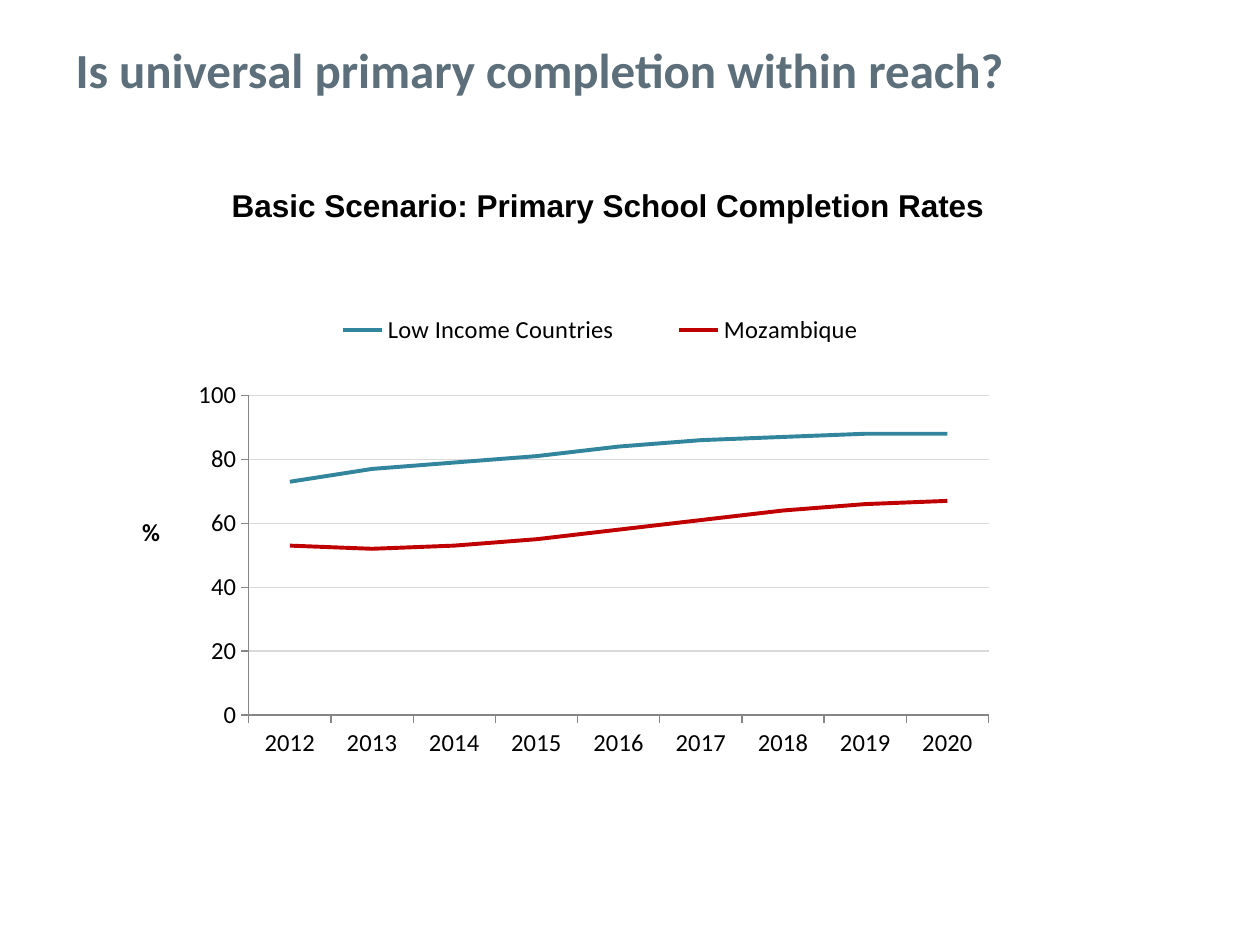
"""Build a slide with a line chart of primary school completion rates."""
import pptx
import pptx.chart.data
import pptx.dml.color
import pptx.enum.chart
import pptx.enum.text
import pptx.oxml
import pptx.oxml.ns
import pptx.util
from pptx.util import Inches

COLORS = {
    "title": "5C6F7A",
    "text": "000000",
    "grid": "D9D9D9",
    "axis": "868686",
    "low": "31859C",
    "moz": "C00000",
}
RATES = [
    ("Low Income Countries", "low", [73, 77, 79, 81, 84, 86, 87, 88, 88]),
    ("Mozambique", "moz", [53, 52, 53, 55, 58, 61, 64, 66, 67]),
]
YEARS = [str(year) for year in range(2012, 2021)]


def color(name):
    return pptx.dml.color.RGBColor.from_string(COLORS[name])


def style(font, size=14, face="Calibri", tint="text", bold=False):
    font.size = pptx.util.Pt(size)
    font.name = face
    font.bold = bold
    font.color.rgb = color(tint)


def write(frame, text, **form):
    para = frame.paragraphs[0]
    run = para.add_run()
    run.text = text
    style(run.font, **form)
    return para


def stroke(line, tint, width=0.75):
    line.color.rgb = color(tint)
    line.width = pptx.util.Pt(width)


def place(node, index, **spots):
    for old in node.findall(pptx.oxml.ns.qn("c:layout")):
        node.remove(old)
    target = '<c:layoutTarget val="inner"/>' if "w" in spots and index == 0 else ""
    modes = "".join(f'<c:{key}Mode val="edge"/>' for key in "xy")
    sizes = "".join(f'<c:{key} val="{val}"/>' for key, val in spots.items())
    node.insert(index, pptx.oxml.parse_xml(
        f'<c:layout {pptx.oxml.ns.nsdecls("c")}><c:manualLayout>'
        f"{target}{modes}{sizes}</c:manualLayout></c:layout>"))


def add_title(slide, text):
    title = slide.shapes.title
    title.left, title.top = Inches(0.5), Inches(0)
    title.width, title.height = Inches(9.5), Inches(1.09)
    frame = title.text_frame
    frame.vertical_anchor = pptx.enum.text.MSO_ANCHOR.MIDDLE
    para = write(frame, text, size=28, tint="title", bold=True)
    para.alignment = pptx.enum.text.PP_ALIGN.LEFT


def add_label(slide, text):
    box = slide.shapes.add_textbox(
        Inches(1.74), Inches(1.43), Inches(6.51), Inches(0.4))
    box.text_frame.word_wrap = True
    write(box.text_frame, text, size=18, face="Arial", bold=True)


def set_axes(chart):
    for axis in (chart.category_axis, chart.value_axis):
        axis.major_tick_mark = pptx.enum.chart.XL_TICK_MARK.OUTSIDE
        axis.minor_tick_mark = pptx.enum.chart.XL_TICK_MARK.NONE
        style(axis.tick_labels.font)
        stroke(axis.format.line, "axis")
    axis = chart.value_axis
    axis.minimum_scale, axis.maximum_scale, axis.major_unit = 0, 100, 20
    axis.has_major_gridlines = True
    stroke(axis.major_gridlines.format.line, "grid")
    title = axis.axis_title
    write(title.text_frame, "%", bold=True)
    node = title._element
    body = node.xpath(".//a:bodyPr")[0]
    body.set("rot", "0")
    body.set("vert", "horz")
    place(node, 1, x=0.01, y=0.46)


def set_legend(chart):
    chart.has_legend = True
    legend = chart.legend
    legend.position = pptx.enum.chart.XL_LEGEND_POSITION.TOP
    legend.include_in_layout = False
    style(legend.font)
    place(legend._element, 1, x=0.17, y=0.06, w=0.68, h=0.11)


def add_chart(slide):
    data = pptx.chart.data.CategoryChartData()
    data.categories = YEARS
    for name, tint, rates in RATES:
        data.add_series(name, rates)
    chart = slide.shapes.add_chart(
        pptx.enum.chart.XL_CHART_TYPE.LINE,
        Inches(1.02), Inches(2.14), Inches(7.34), Inches(4.16), data).chart
    chart.has_title = False
    style(chart.font, size=10)
    plot = chart.plots[0]
    plot.vary_by_categories = False
    for series, (name, tint, rates) in zip(plot.series, RATES):
        series.smooth = False
        series.marker.style = pptx.enum.chart.XL_MARKER_STYLE.NONE
        stroke(series.format.line, tint, 2.25)
    set_axes(chart)
    set_legend(chart)
    area = chart._chartSpace.chart.plotArea
    place(area, 0, x=0.13, y=0.24, w=0.8, h=0.61)


def main():
    deck = pptx.Presentation()
    deck.slide_width, deck.slide_height = Inches(10), Inches(7.5)
    slide = deck.slides.add_slide(deck.slide_layouts[5])
    add_title(slide, "Is universal primary completion within reach?")
    add_label(slide, "Basic Scenario: Primary School Completion Rates")
    add_chart(slide)
    deck.save("out.pptx")


if __name__ == "__main__":
    main()
